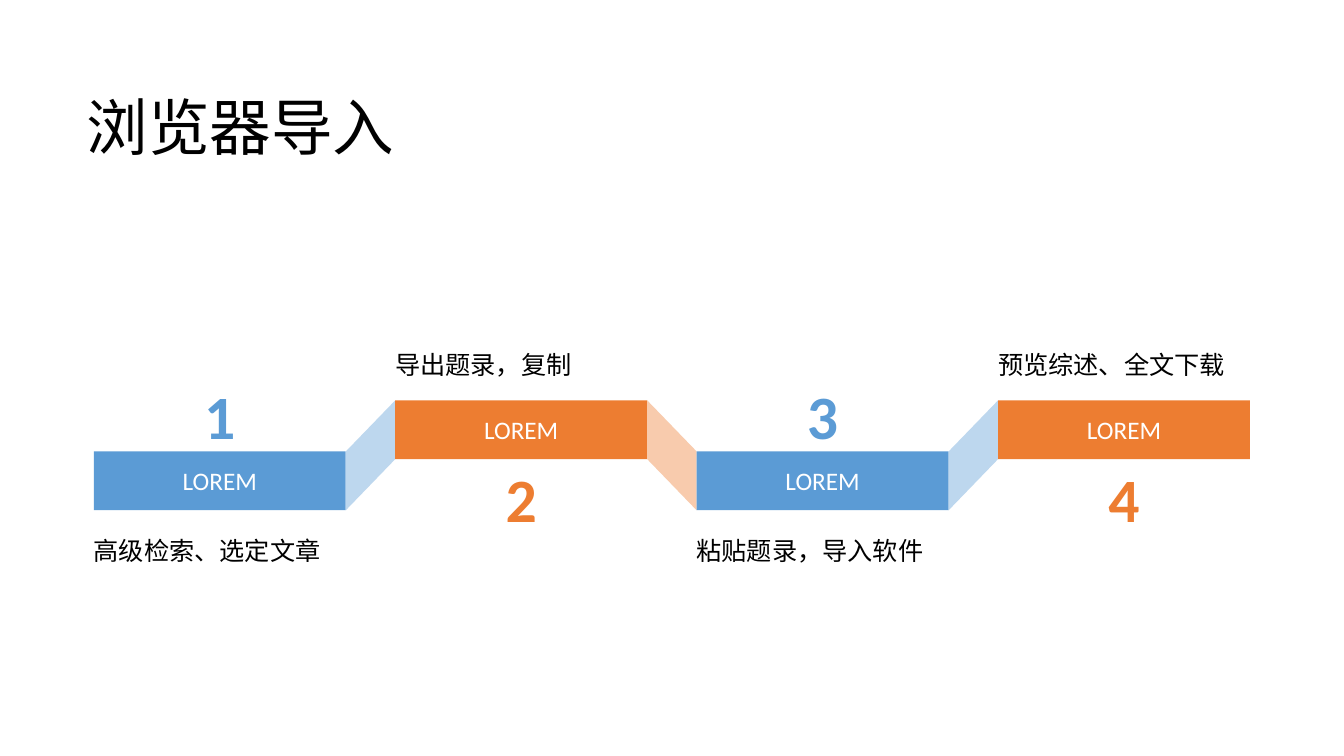
import pptx
import pptx.dml.color
import pptx.enum.shapes
import pptx.enum.text
import pptx.util

Pt = pptx.util.Pt
RGB = pptx.dml.color.RGBColor.from_string
ALIGN = pptx.enum.text.PP_ALIGN
ANCHOR = pptx.enum.text.MSO_ANCHOR
AUTO_SIZE = pptx.enum.text.MSO_AUTO_SIZE


class Theme:
    font = "Calibri"
    ink, white = RGB("000000"), RGB("FFFFFF")
    blue, pale_blue = RGB("5B9BD5"), RGB("BDD7EE")
    orange, pale_orange = RGB("ED7D31"), RGB("F8CBAD")
    display_size, body_size = Pt(44), Pt(18)


def write(shape, text, size=Theme.body_size, color=Theme.ink, bold=False,
          align=ALIGN.LEFT, anchor=ANCHOR.TOP, spacing=1.0,
          inset=(7.2, 3.6), fit=AUTO_SIZE.NONE):
    frame = shape.text_frame
    frame.word_wrap = True
    frame.auto_size = fit
    frame.vertical_anchor = anchor
    frame.margin_left = frame.margin_right = Pt(inset[0])
    frame.margin_top = frame.margin_bottom = Pt(inset[1])
    paragraph = frame.paragraphs[0]
    paragraph.alignment = align
    paragraph.line_spacing = spacing
    run = paragraph.add_run()
    run.text = text
    run.font.name = Theme.font
    run.font.size = size
    run.font.bold = bold
    run.font.color.rgb = color


def paint(shape, color):
    shape.shadow.inherit = False
    shape.fill.solid()
    shape.fill.fore_color.rgb = color
    shape.line.fill.background()


deck = pptx.Presentation()
deck.slide_width, deck.slide_height = Pt(960), Pt(540)
slide = deck.slides.add_slide(deck.slide_layouts[6])
shapes = slide.shapes

# Title
title = shapes.add_textbox(Pt(54.7), Pt(41), Pt(828), Pt(104.4))
write(title, "浏览器导入", size=Theme.display_size, anchor=ANCHOR.MIDDLE,
      spacing=0.9, fit=AUTO_SIZE.TEXT_TO_FIT_SHAPE)

# Steps alternate between a low blue bar and a high orange bar
steps = ["高级检索、选定文章", "导出题录，复制", "粘贴题录，导入软件", "预览综述、全文下载"]
first_left, pitch = 67, 215.3
bar_width, bar_height = 180, 42
low_top, high_top = 322.5, 286

for index, caption in enumerate(steps):
    low = index % 2 == 0
    left = first_left + index * pitch
    bar_top = low_top if low else high_top
    color = Theme.blue if low else Theme.orange

    # Bar
    bar = shapes.add_shape(pptx.enum.shapes.MSO_SHAPE.RECTANGLE,
                           Pt(left), Pt(bar_top), Pt(bar_width), Pt(bar_height))
    paint(bar, color)
    write(bar, "LOREM", color=Theme.white, align=ALIGN.CENTER, anchor=ANCHOR.MIDDLE)

    # Fold leading to the next bar
    if index < len(steps) - 1:
        next_top = high_top if low else low_top
        right, next_left = left + bar_width, left + pitch
        outline = shapes.build_freeform(Pt(right), Pt(bar_top))
        outline.add_line_segments([
            (Pt(next_left), Pt(next_top)),
            (Pt(next_left), Pt(next_top + bar_height)),
            (Pt(right), Pt(bar_top + bar_height)),
        ], close=True)
        paint(outline.convert_to_shape(), Theme.pale_blue if low else Theme.pale_orange)

    # Number on one side of the bar, caption on the other
    number = shapes.add_textbox(Pt(left), Pt(269.3 if low else 329),
                                Pt(bar_width), Pt(53.3))
    write(number, str(index + 1), size=Theme.display_size, color=color, bold=True,
          align=ALIGN.CENTER, anchor=ANCHOR.BOTTOM if low else ANCHOR.TOP,
          inset=(0, 0), fit=AUTO_SIZE.SHAPE_TO_FIT_TEXT)
    label = shapes.add_textbox(Pt(left), Pt(374.4 if low else 241.9),
                               Pt(bar_width), Pt(33.1))
    write(label, caption, align=ALIGN.JUSTIFY,
          anchor=ANCHOR.TOP if low else ANCHOR.BOTTOM,
          spacing=1.2, inset=(0, 3.6), fit=AUTO_SIZE.SHAPE_TO_FIT_TEXT)

deck.save("out.pptx")
